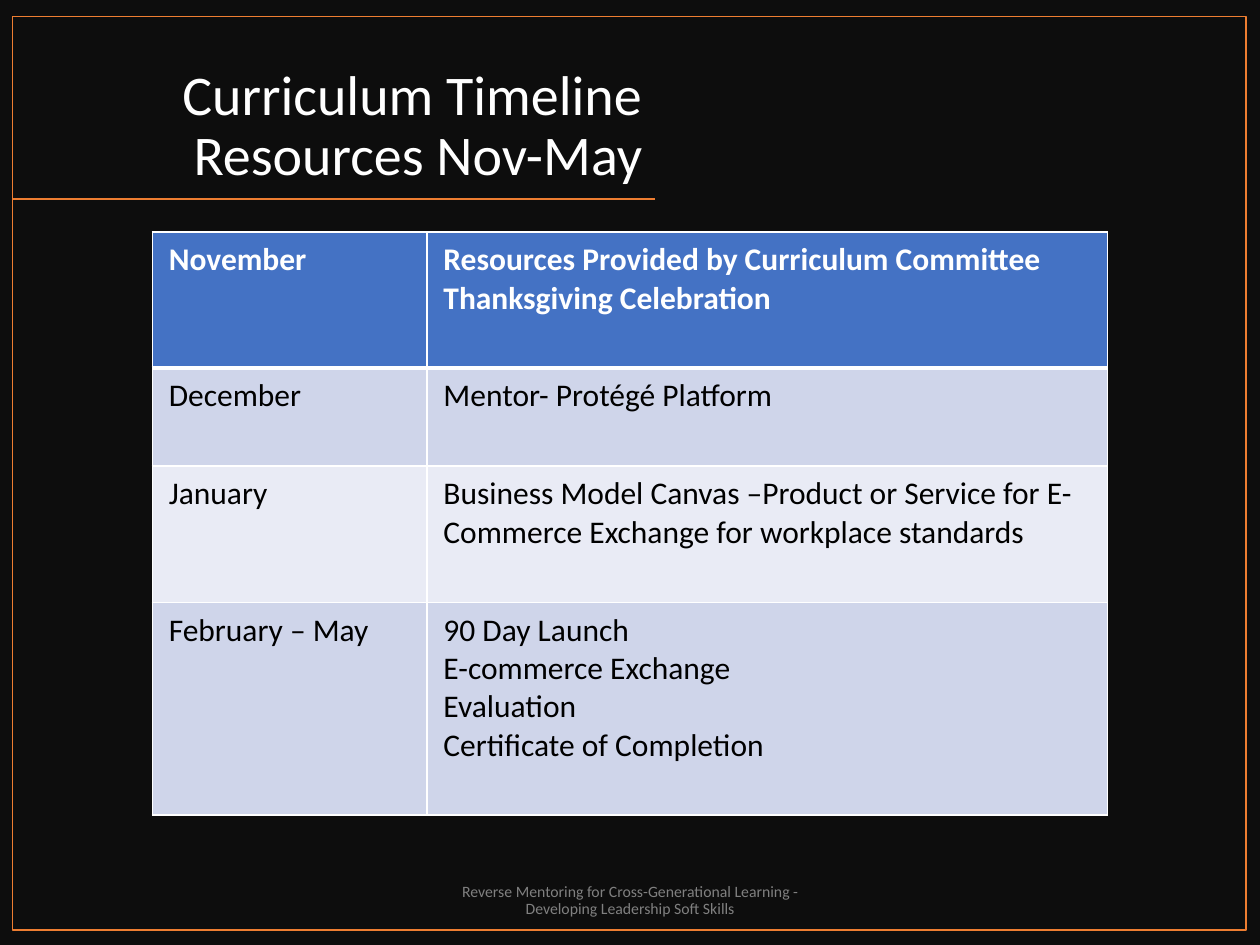
from lxml import etree
from pptx import Presentation
from pptx.dml.color import RGBColor
from pptx.enum import shapes, text
from pptx.oxml import ns
from pptx.util import Inches, Pt

# Content
TITLE = "Curriculum Timeline Resources Nov-May"
FOOTER = "Reverse Mentoring for Cross-Generational Learning - Developing Leadership Soft Skills"
# Month, resources, row height
TIMELINE = [
    ("November", "Resources Provided by Curriculum Committee\nThanksgiving Celebration", 1.08),
    ("December", "Mentor- Protégé Platform", 0.78),
    ("January", "Business Model Canvas –Product or Service for E-Commerce Exchange "
                "for workplace standards", 1.08),
    ("February – May", "90 Day Launch\nE-commerce Exchange\nEvaluation\n"
                       "Certificate of Completion", 1.69),
]
COLUMN_WIDTHS = (2.18, 5.4)

FONT = "Calibri"
BLACK, WHITE, ORANGE, GREY = "0D0D0D", "FFFFFF", "ED7D31", "808080"
HEADER_FILL, BAND_FILLS = "4472C4", ("CFD5EA", "E9EBF5")


def color(value):
    return RGBColor.from_string(value)


def box(*values):
    return [Inches(value) for value in values]


def format_text(frame, size, font_color, alignment, bold=False, spacing=None):
    for paragraph in frame.paragraphs:
        paragraph.alignment = alignment
        paragraph.line_spacing = spacing
        for run in paragraph.runs:
            run.font.name = FONT
            run.font.size = Pt(size)
            run.font.bold = bold
            run.font.color.rgb = color(font_color)


def add_rectangle(slide, bounds, fill=None, line=None):
    shape = slide.shapes.add_shape(shapes.MSO_SHAPE.RECTANGLE, *box(*bounds))
    shape.shadow.inherit = False
    if fill:
        shape.fill.solid()
        shape.fill.fore_color.rgb = color(fill)
    else:
        shape.fill.background()
    if line:
        shape.line.color.rgb = color(line)
        shape.line.width = Pt(1)
    else:
        shape.line.fill.background()
    return shape


def add_borders(cell, widths):
    properties = cell._tc.get_or_add_tcPr()
    for side, width in zip(("lnL", "lnR", "lnT", "lnB"), widths):
        border = etree.SubElement(properties, ns.qn(f"a:{side}"), w=str(Pt(width)))
        fill = etree.SubElement(border, ns.qn("a:solidFill"))
        etree.SubElement(fill, ns.qn("a:srgbClr"), val=WHITE)


presentation = Presentation()
presentation.slide_width, presentation.slide_height = box(10, 7.5)
slide = presentation.slides.add_slide(presentation.slide_layouts[5])

# Background behind the title
title = slide.shapes.title
background = add_rectangle(slide, (0, 0, 10, 7.5), fill=BLACK)
title.element.addprevious(background.element)

# Title
title.left, title.top, title.width, title.height = box(0.69, 0.42, 4.51, 1.12)
title.text_frame.text = TITLE
title.text_frame.word_wrap = True
title.text_frame.auto_size = text.MSO_AUTO_SIZE.NONE
title.text_frame.vertical_anchor = text.MSO_ANCHOR.BOTTOM
format_text(title.text_frame, 32, WHITE, text.PP_ALIGN.RIGHT, spacing=0.9)

# Title rule and frame
rule = slide.shapes.add_connector(shapes.MSO_CONNECTOR.STRAIGHT, *box(5.2, 1.58, 0.1, 1.58))
rule.line.color.rgb = color(ORANGE)
rule.line.width = Pt(1)
etree.SubElement(rule.element.spPr, ns.qn("a:effectLst"))
add_rectangle(slide, (0.1, 0.13, 9.79, 7.25), line=ORANGE)

# Footer
footer = slide.shapes.add_textbox(*box(3.31, 6.95, 3.38, 0.4)).text_frame
footer.word_wrap = True
footer.vertical_anchor = text.MSO_ANCHOR.MIDDLE
footer.text = FOOTER
footer.paragraphs[0].space_after = Pt(6)
format_text(footer, 9, GREY, text.PP_ALIGN.CENTER, spacing=0.9)

# Timeline table
table_height = sum(height for *_, height in TIMELINE)
table = slide.shapes.add_table(len(TIMELINE), len(COLUMN_WIDTHS),
                               *box(1.21, 1.84, sum(COLUMN_WIDTHS), table_height)).table
for column, width in zip(table.columns, COLUMN_WIDTHS):
    column.width = Inches(width)
for row_index, (*entries, height) in enumerate(TIMELINE):
    table.rows[row_index].height = Inches(height)
    is_header = row_index == 0
    fill = HEADER_FILL if is_header else BAND_FILLS[(row_index - 1) % 2]
    top, bottom = 3 if row_index == 1 else 1, 3 if is_header else 1
    for column_index, entry in enumerate(entries):
        cell = table.cell(row_index, column_index)
        cell.text_frame.text = entry
        cell.margin_left = cell.margin_right = Inches(0.13)
        cell.margin_top = cell.margin_bottom = Inches(0.07)
        add_borders(cell, (1, 1, top, bottom))
        cell.fill.solid()
        cell.fill.fore_color.rgb = color(fill)
        format_text(cell.text_frame, 18, WHITE if is_header else "000000",
                    text.PP_ALIGN.LEFT, bold=is_header)

presentation.save("out.pptx")
